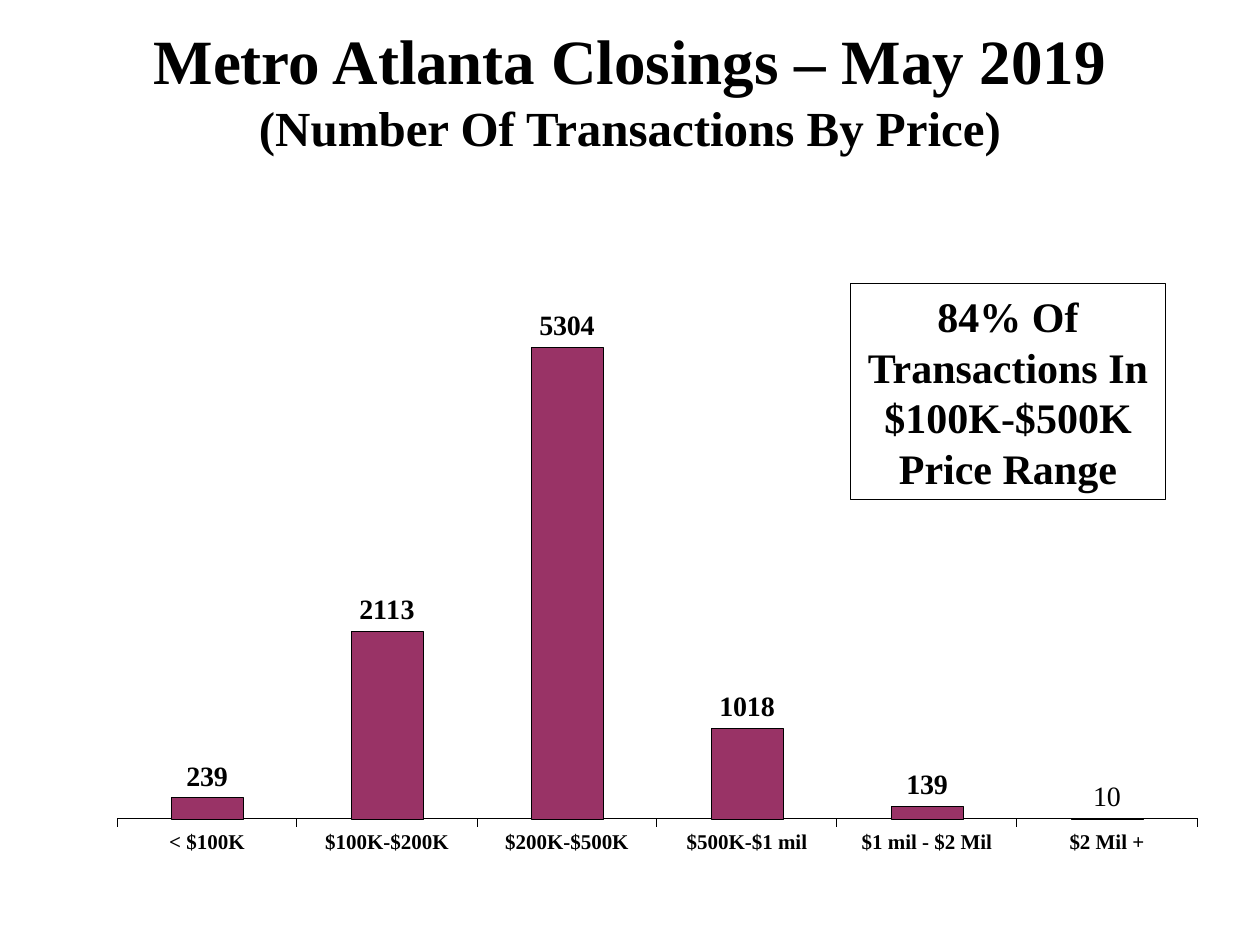
from lxml.etree import SubElement
from pptx import Presentation
from pptx.chart.data import CategoryChartData
from pptx.dml.color import RGBColor
from pptx.enum.chart import XL_CHART_TYPE, XL_LABEL_POSITION, XL_TICK_LABEL_POSITION, XL_TICK_MARK
from pptx.enum.shapes import MSO_SHAPE
from pptx.enum.text import MSO_ANCHOR, PP_ALIGN
from pptx.oxml.ns import qn
from pptx.util import Pt

# Content
TITLE_LINES = ["Metro Atlanta Closings – May 2019", "(Number Of Transactions By Price)"]
CALLOUT = "84% Of Transactions In $100K-$500K Price Range"
CLOSINGS = [
    ("< $100K", 239),
    ("$100K-$200K", 2113),
    ("$200K-$500K", 5304),
    ("$500K-$1 mil", 1018),
    ("$1 mil - $2 Mil", 139),
    ("$2 Mil +", 10),
]

THEME = {
    "font": "Times New Roman",
    "ink": RGBColor(0x00, 0x00, 0x00),
    "bar": RGBColor(0x99, 0x33, 0x66),
    "title": [36, 28],
    "callout": 24,
    "value": 16,
    "category": 12,
}

# Frames: left, top, width, height in points
TITLE_FRAME = [Pt(v) for v in (0, 36, 720, 30)]
CHART_FRAME = [Pt(v) for v in (47.6, 112, 642.9, 391.2)]
CALLOUT_FRAME = [Pt(v) for v in (486, 162, 180, 123.5)]
PLOT_LAYOUT = {"x": 0.03, "y": 0.13, "w": 0.96, "h": 0.78}


def style_font(font, size, bold=True):
    font.name = THEME["font"]
    font.size = Pt(size)
    font.bold = bold
    font.color.rgb = THEME["ink"]


def style_line(line, width):
    line.color.rgb = THEME["ink"]
    line.width = Pt(width)


def write_centered(text_frame, text, sizes):
    text_frame.word_wrap = True
    text_frame.vertical_anchor = MSO_ANCHOR.MIDDLE
    paragraph = text_frame.paragraphs[0]
    paragraph.text = text
    paragraph.alignment = PP_ALIGN.CENTER
    for run, size in zip(paragraph.runs, sizes):
        style_font(run.font, size)


def set_plot_layout(chart):
    plot_area = chart.element.find(".//" + qn("c:plotArea"))
    for old_layout in plot_area.findall(qn("c:layout")):
        plot_area.remove(old_layout)
    layout = SubElement(plot_area, qn("c:layout"))
    plot_area.insert(0, layout)
    manual = SubElement(layout, qn("c:manualLayout"))
    settings = {"layoutTarget": "inner", "xMode": "edge", "yMode": "edge", **PLOT_LAYOUT}
    for name, value in settings.items():
        SubElement(manual, qn("c:" + name)).set("val", str(value))


def add_closings_chart(slide):
    data = CategoryChartData(number_format="0")
    data.categories = [name for name, _ in CLOSINGS]
    data.add_series("Series 1", [count for _, count in CLOSINGS])
    chart = slide.shapes.add_chart(XL_CHART_TYPE.COLUMN_CLUSTERED, *CHART_FRAME, data).chart
    chart.has_legend = False
    chart.has_title = False
    style_font(chart.font, THEME["category"])
    set_plot_layout(chart)

    # Axes
    value_axis = chart.value_axis
    value_axis.minimum_scale, value_axis.maximum_scale = 0, 6000
    value_axis.has_major_gridlines = False
    value_axis.visible = False
    category_axis = chart.category_axis
    category_axis.major_tick_mark = XL_TICK_MARK.OUTSIDE
    category_axis.tick_label_position = XL_TICK_LABEL_POSITION.LOW
    style_font(category_axis.tick_labels.font, THEME["category"])
    style_line(category_axis.format.line, 0.01)

    # Columns
    plot = chart.plots[0]
    plot.gap_width = 150
    plot.vary_by_categories = False
    series = plot.series[0]
    series.format.fill.solid()
    series.format.fill.fore_color.rgb = THEME["bar"]
    style_line(series.format.line, 0.06)

    # Value labels, the last one in regular weight
    labels = series.data_labels
    labels.show_value = True
    labels.number_format = "0"
    labels.number_format_is_linked = False
    labels.position = XL_LABEL_POSITION.OUTSIDE_END
    style_font(labels.font, THEME["value"])
    last_label = series.points[len(CLOSINGS) - 1].data_label
    style_font(last_label.font, THEME["value"], bold=False)
    last_label.position = XL_LABEL_POSITION.OUTSIDE_END


def main():
    presentation = Presentation()
    presentation.slide_width, presentation.slide_height = Pt(720), Pt(540)
    slide = presentation.slides.add_slide(presentation.slide_layouts[6])

    add_closings_chart(slide)

    # Title
    title = slide.shapes.add_textbox(*TITLE_FRAME)
    write_centered(title.text_frame, "\v".join(TITLE_LINES), THEME["title"])

    # Callout
    callout = slide.shapes.add_shape(MSO_SHAPE.RECTANGLE, *CALLOUT_FRAME)
    callout.shadow.inherit = False
    callout.fill.background()
    style_line(callout.line, 0.75)
    write_centered(callout.text_frame, CALLOUT, [THEME["callout"]])

    presentation.save("out.pptx")


if __name__ == "__main__":
    main()
